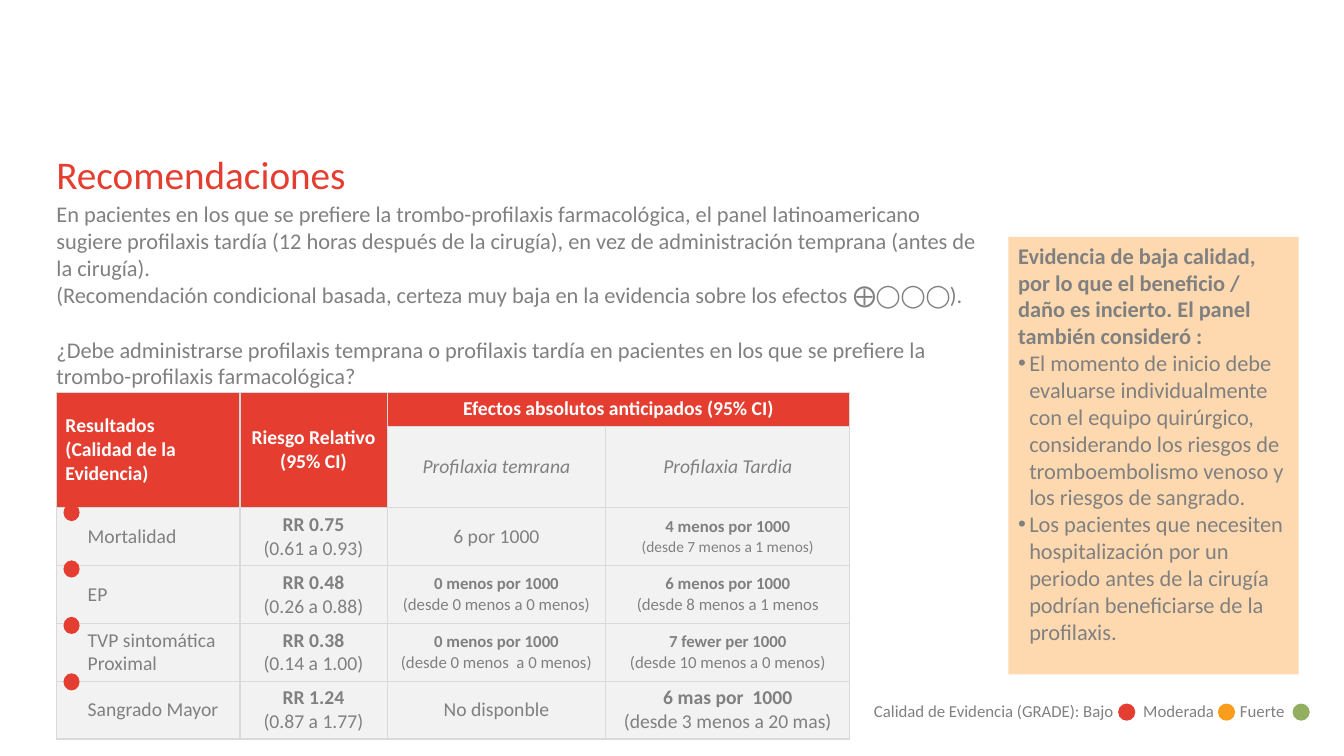
from lxml import etree
from pptx import Presentation
from pptx import util as u
from pptx.dml.color import RGBColor
from pptx.enum import shapes, text
from pptx.oxml import ns

RED, DOT_RED, ORANGE, GREEN = "E53E31", "E43E32", "F99D1C", "91AF5F"
GRAY, PALE, BORDER, PEACH, WHITE = "808080", "F2F2F2", "D9D9D9", "FED9B0", "FFFFFF"
FONT = "Calibri"
LEFT = 0.56

# Content
TITLE = "Recomendaciones"
RECOMMENDATION = [
    "En pacientes en los que se prefiere la trombo-profilaxis farmacológica, el panel "
    "latinoamericano sugiere profilaxis tardía (12 horas después de la cirugía), en vez de "
    "administración temprana (antes de la cirugía).",
    "(Recomendación condicional basada, certeza muy baja en la evidencia sobre los efectos ⨁◯◯◯).",
]
QUESTION = ("¿Debe administrarse profilaxis temprana o profilaxis tardía en pacientes en los que "
            "se prefiere la trombo-profilaxis farmacológica?")
EVIDENCE_HEAD = ("Evidencia de baja calidad, por lo que el beneficio / daño es incierto. "
                 "El panel también consideró :")
EVIDENCE_POINTS = [
    "El momento de inicio debe evaluarse individualmente con el equipo quirúrgico, considerando "
    "los riesgos de tromboembolismo venoso y los riesgos de sangrado.",
    "Los pacientes que necesiten hospitalización por un periodo antes de la cirugía podrían "
    "beneficiarse de la profilaxis.",
]
LEGEND = "Calidad de Evidencia (GRADE): Bajo\tModerada\tFuerte"
LEGEND_TABS = [2.67, 3.63]
LEGEND_DOTS = [(11.09, DOT_RED), (12.08, ORANGE), (12.82, GREEN)]

# Header cells: row, column, last row, last column, lines
HEADERS = [
    (0, 0, 1, 0, ["Resultados", "(Calidad de la Evidencia)"]),
    (0, 1, 1, 1, ["Riesgo Relativo", "(95% CI)"]),
    (0, 2, 0, 3, ["Efectos absolutos anticipados (95% CI)"]),
]
SUBHEADERS = ["Profilaxia temrana", "Profilaxia Tardia"]
# Outcome lines, then (value, range, value size, range size) for each column
OUTCOMES = [
    (["Mortalidad"], ("RR 0.75", "(0.61 a 0.93)", 14, 14), ("", "6 por 1000", 14, 14),
     ("4 menos por 1000", "(desde 7 menos a 1 menos)", 12, 11)),
    (["EP"], ("RR 0.48", "(0.26 a 0.88)", 14, 14),
     ("0 menos por 1000", "(desde 0 menos a 0 menos)", 12, 12),
     ("6 menos por 1000", "(desde 8 menos a 1 menos", 12, 12)),
    (["TVP sintomática", "Proximal"], ("RR 0.38", "(0.14 a 1.00)", 14, 14),
     ("0 menos por 1000", "(desde 0 menos  a 0 menos)", 12, 12),
     ("7 fewer per 1000", "(desde 10 menos a 0 menos)", 12, 12)),
    (["Sangrado Mayor"], ("RR 1.24", "(0.87 a 1.77)", 14, 14), ("", "No disponble", 14, 14),
     ("6 mas por  1000", "(desde 3 menos a 20 mas)", 14, 14)),
]
COLUMNS = [1.82, 1.46, 2.17, 2.42]
ROWS = [0.33, 0.57, 0.53, 0.57, 0.57, 0.52]


def color(value):
    return RGBColor.from_string(value)


def box(*lengths):
    return [u.Inches(length) for length in lengths]


def add_run(paragraph, words, size, hue=GRAY, bold=False, italic=False):
    run = paragraph.add_run()
    run.text = words
    font = run.font
    font.name, font.size, font.bold, font.italic = FONT, u.Pt(size), bold, italic
    font.color.rgb = color(hue)


def write_lines(frame, lines, size, align=text.PP_ALIGN.LEFT, **style):
    for index, line in enumerate(lines):
        paragraph = frame.add_paragraph() if index else frame.paragraphs[0]
        paragraph.alignment = align
        add_run(paragraph, line, size, **style)


def plain_frame(shape, inset=0):
    frame = shape.text_frame
    frame.word_wrap = True
    frame.auto_size = text.MSO_AUTO_SIZE.NONE
    frame.vertical_anchor = text.MSO_ANCHOR.TOP
    if not inset:
        frame.margin_left = frame.margin_right = frame.margin_top = frame.margin_bottom = 0
    return frame


def place(shape, *lengths):
    shape.left, shape.top, shape.width, shape.height = box(*lengths)


def add_filled(parent, kind, hue, *lengths):
    shape = parent.add_shape(kind, *box(*lengths))
    shape.shadow.inherit = False
    shape.fill.solid()
    shape.fill.fore_color.rgb = color(hue)
    shape.line.fill.background()
    return shape


def style_cell(cell, fill):
    cell.fill.solid()
    cell.fill.fore_color.rgb = color(fill)
    cell.vertical_anchor = text.MSO_ANCHOR.MIDDLE
    cell.margin_left = cell.margin_right = u.Inches(0.09)
    cell.margin_top = cell.margin_bottom = u.Inches(0.05)
    properties = cell._tc.get_or_add_tcPr()
    for index, side in enumerate(("lnL", "lnR", "lnT", "lnB")):
        line = etree.Element(ns.qn("a:" + side), w=str(u.Pt(1)))
        solid = etree.SubElement(line, ns.qn("a:solidFill"))
        etree.SubElement(solid, ns.qn("a:srgbClr"), val=BORDER)
        properties.insert(index, line)


presentation = Presentation()
presentation.slide_width, presentation.slide_height = box(13.33, 7.5)
slide = presentation.slides.add_slide(presentation.slide_layouts[1])
CENTER = text.PP_ALIGN.CENTER

# Title, question and recommendation
title, question = slide.shapes.title, slide.placeholders[1]
place(title, LEFT, 1.49, 12, 0.78)
write_lines(plain_frame(title), [TITLE], 28, hue=RED)
place(question, LEFT, 3.33, 9.27, 0.73)
write_lines(plain_frame(question), [QUESTION], 16)
question_properties = question.text_frame.paragraphs[0]._p.get_or_add_pPr()
question_properties.set("marL", "0")
question_properties.set("indent", "0")
etree.SubElement(question_properties, ns.qn("a:buNone"))
recommendation = slide.shapes.add_textbox(*box(LEFT, 1.99, 9.16, 1.45))
write_lines(plain_frame(recommendation), RECOMMENDATION, 16)

# Results table
table = slide.shapes.add_table(len(ROWS), len(COLUMNS),
                               *box(LEFT, 3.89, sum(COLUMNS), sum(ROWS))).table
table.first_row = table.horz_banding = False
for column, width in zip(table.columns, COLUMNS):
    column.width = u.Inches(width)
for row, height in zip(table.rows, ROWS):
    row.height = u.Inches(height)
for r in range(len(ROWS)):
    for c in range(len(COLUMNS)):
        style_cell(table.cell(r, c), RED if r == 0 or (r == 1 and c < 2) else PALE)
for r, c, last_row, last_column, lines in HEADERS:
    table.cell(r, c).merge(table.cell(last_row, last_column))
    write_lines(table.cell(r, c).text_frame, lines, 14,
                CENTER if c else text.PP_ALIGN.LEFT, hue=WHITE, bold=True)
for c, label in enumerate(SUBHEADERS, 2):
    write_lines(table.cell(1, c).text_frame, [label], 14, CENTER, italic=True)
for r, (outcome, *effects) in enumerate(OUTCOMES, 2):
    table.cell(r, 0).margin_left = u.Inches(0.31)
    write_lines(table.cell(r, 0).text_frame, outcome, 14)
    for c, (value, interval, value_size, interval_size) in enumerate(effects, 1):
        paragraph = table.cell(r, c).text_frame.paragraphs[0]
        paragraph.alignment = CENTER
        if value:
            add_run(paragraph, value, value_size, bold=True)
            paragraph.add_line_break()
        add_run(paragraph, interval, interval_size)

# Evidence panel
panel = add_filled(slide.shapes, shapes.MSO_SHAPE.RECTANGLE, PEACH, 10, 2.35, 2.88, 4.34)
panel_frame = plain_frame(panel, inset=0.1)
write_lines(panel_frame, [EVIDENCE_HEAD], 16, bold=True)
for point in EVIDENCE_POINTS:
    paragraph = panel_frame.add_paragraph()
    paragraph.alignment = text.PP_ALIGN.LEFT
    properties = paragraph._p.get_or_add_pPr()
    properties.set("marL", str(u.Inches(0.11)))
    properties.set("indent", str(-u.Inches(0.11)))
    etree.SubElement(properties, ns.qn("a:buFont"), typeface="Arial")
    etree.SubElement(properties, ns.qn("a:buChar"), char="•")
    add_run(paragraph, point, 16)

# Quality dots beside the outcomes
for index in range(len(OUTCOMES)):
    add_filled(slide.shapes, shapes.MSO_SHAPE.OVAL, DOT_RED, 0.63, 5 + 0.56 * index, 0.16, 0.17)

# Quality legend
legend = slide.shapes.add_group_shape().shapes
label = legend.add_textbox(*box(8.57, 6.9, 4.76, 0.3))
label.text_frame.word_wrap = True
paragraph = label.text_frame.paragraphs[0]
tabs = etree.SubElement(paragraph._p.get_or_add_pPr(), ns.qn("a:tabLst"))
for position in LEGEND_TABS:
    etree.SubElement(tabs, ns.qn("a:tab"), pos=str(u.Inches(position)), algn="l")
add_run(paragraph, LEGEND, 12)
for left, hue in LEGEND_DOTS:
    add_filled(legend, shapes.MSO_SHAPE.OVAL, hue, left, 6.98, 0.17, 0.17)

presentation.save("out.pptx")
